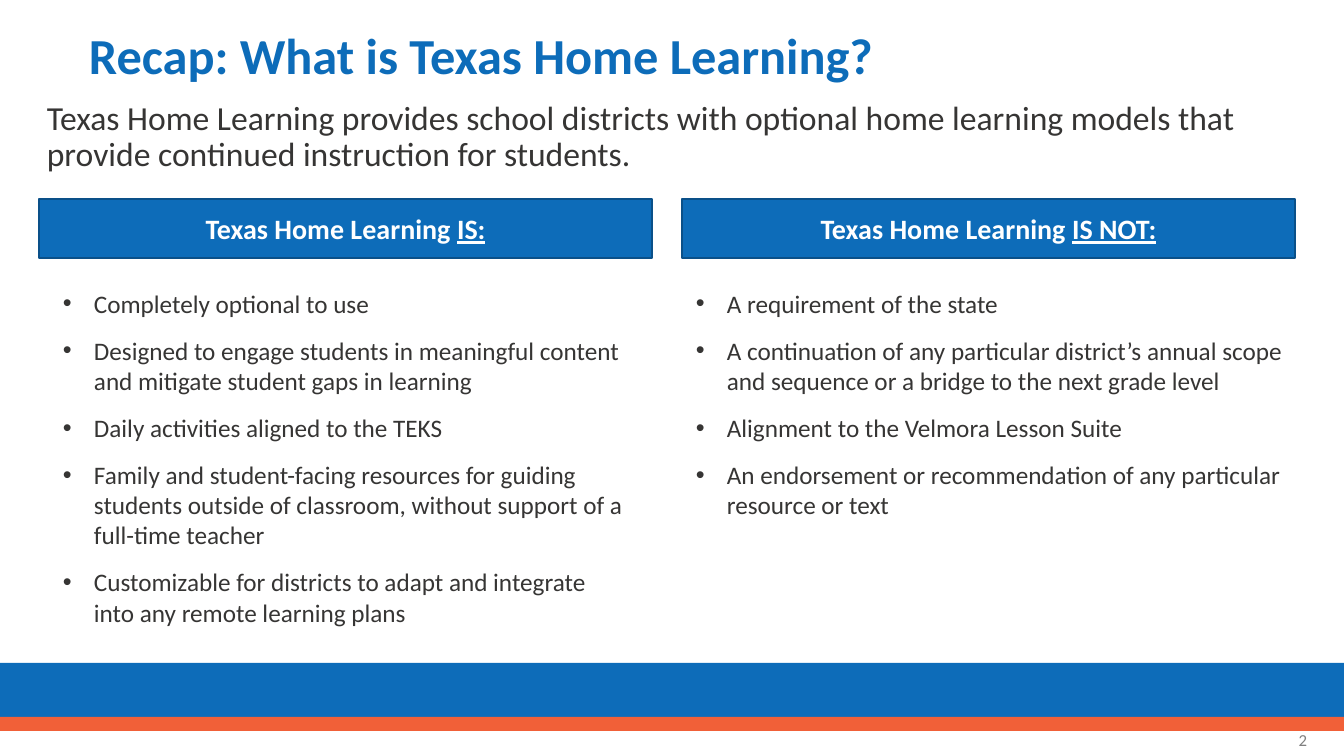
from dataclasses import dataclass

from lxml.etree import SubElement
from pptx import Presentation
from pptx.dml.color import RGBColor as RGB
from pptx.enum.shapes import MSO_SHAPE as SHAPE
from pptx.enum.text import MSO_ANCHOR as ANCHOR, PP_ALIGN as ALIGN
from pptx.oxml.ns import qn
from pptx.util import Emu, Pt

SCALE = 914400 / 100.8
HARD = chr(160)


def px(n):
    return Emu(round(n * SCALE))


@dataclass(frozen=True)
class Theme:
    font: str = "Calibri"
    blue: str = "0D6CB9"
    edge: str = "0A5089"
    coral: str = "F16038"
    ink: str = "363534"
    grey: str = "808080"
    white: str = "FFFFFF"
    title: int = 36
    lead: int = 24
    head: int = 20
    body: int = 18
    note: int = 12


def write(frame, paras, size, color, bold=False, align=ALIGN.LEFT,
          anchor=ANCHOR.TOP, line=None, after=None, hang=0, font="Calibri"):
    frame.word_wrap = True
    frame.vertical_anchor = anchor
    for i, runs in enumerate(paras):
        para = frame.paragraphs[0] if i == 0 else frame.add_paragraph()
        para.alignment = align
        if hang:
            props = para._p.get_or_add_pPr()
            props.set("marL", str(px(hang)))
            props.set("indent", str(-px(hang)))
            SubElement(props, qn("a:buFont")).set("typeface", "Arial")
            SubElement(props, qn("a:buChar")).set("char", "•")
        if line:
            para.line_spacing = line
        if after:
            para.space_after = Pt(after)
        for j, words in enumerate(runs):
            run = para.add_run()
            run.text = words
            run.font.name = font
            run.font.size = Pt(size)
            run.font.bold = bold
            run.font.underline = j > 0
            run.font.color.rgb = RGB.from_string(color)


class Page:
    def __init__(self, deck, theme):
        self.theme = theme
        self.slide = deck.slides.add_slide(deck.slide_layouts[6])

    def text(self, box, paras, **form):
        area = self.slide.shapes.add_textbox(*map(px, box))
        write(area.text_frame, paras, font=self.theme.font, **form)

    def block(self, box, fill, edge=None):
        rect = self.slide.shapes.add_shape(SHAPE.RECTANGLE, *map(px, box))
        rect.shadow.inherit = False
        rect.fill.solid()
        rect.fill.fore_color.rgb = RGB.from_string(fill)
        if edge:
            rect.line.color.rgb = RGB.from_string(edge)
            rect.line.width = Pt(1)
        else:
            rect.line.fill.background()
        return rect

    def header(self, box, runs):
        t = self.theme
        rect = self.block(box, t.blue, t.edge)
        write(rect.text_frame, [runs], t.head, t.white, bold=True,
              align=ALIGN.CENTER, anchor=ANCHOR.MIDDLE, font=t.font)

    def bullets(self, box, items):
        t = self.theme
        self.text(box, [[item] for item in items], size=t.body,
                  color=t.ink, after=12, hang=31)


COLUMNS = [
    (39, 53, 282, "IS:", [
        "Completely optional to use",
        "Designed to engage students in meaningful content and mitigate student gaps in learning",
        "Daily activities aligned to the TEKS",
        "Family and student-facing resources for guiding students outside of classroom, without support of a full-time teacher",
        f"Customizable for districts to adapt and integrate into{HARD}any remote learning plans",
    ]),
    (682, 686, 241, "IS NOT:", [
        "A requirement of the state",
        "A continuation of any particular district’s annual scope and sequence or a bridge to the next grade level",
        "Alignment to the Velmora Lesson Suite",
        "An endorsement or recommendation of any particular resource or text",
    ]),
]


def main():
    deck = Presentation()
    deck.slide_width, deck.slide_height = px(1344), px(756)
    t = Theme()
    page = Page(deck, t)

    page.block((0, 663, 1344, 58), t.blue)
    page.block((0, 717, 1344, 14), t.coral)
    page.text((79, 17, 1340, 83), [["Recap: What is Texas Home Learning?"]],
              size=t.title, color=t.blue, bold=True,
              anchor=ANCHOR.MIDDLE, line=0.9)
    page.text((37, 96, 1267, 104), [[
        "Texas Home Learning provides school districts with optional home "
        "learning models that provide continued instruction for students."]],
              size=t.lead, color=t.ink, line=0.9)

    for left, inner, tall, label, items in COLUMNS:
        page.header((left, 199, 613, 59), ["Texas Home Learning ", label])
        page.bullets((inner, 283, 613, tall), items)

    page.text((1015, 720, 302, 40), [["2"]], size=t.note, color=t.grey,
              align=ALIGN.RIGHT, anchor=ANCHOR.MIDDLE)
    deck.save("out.pptx")


if __name__ == "__main__":
    main()
